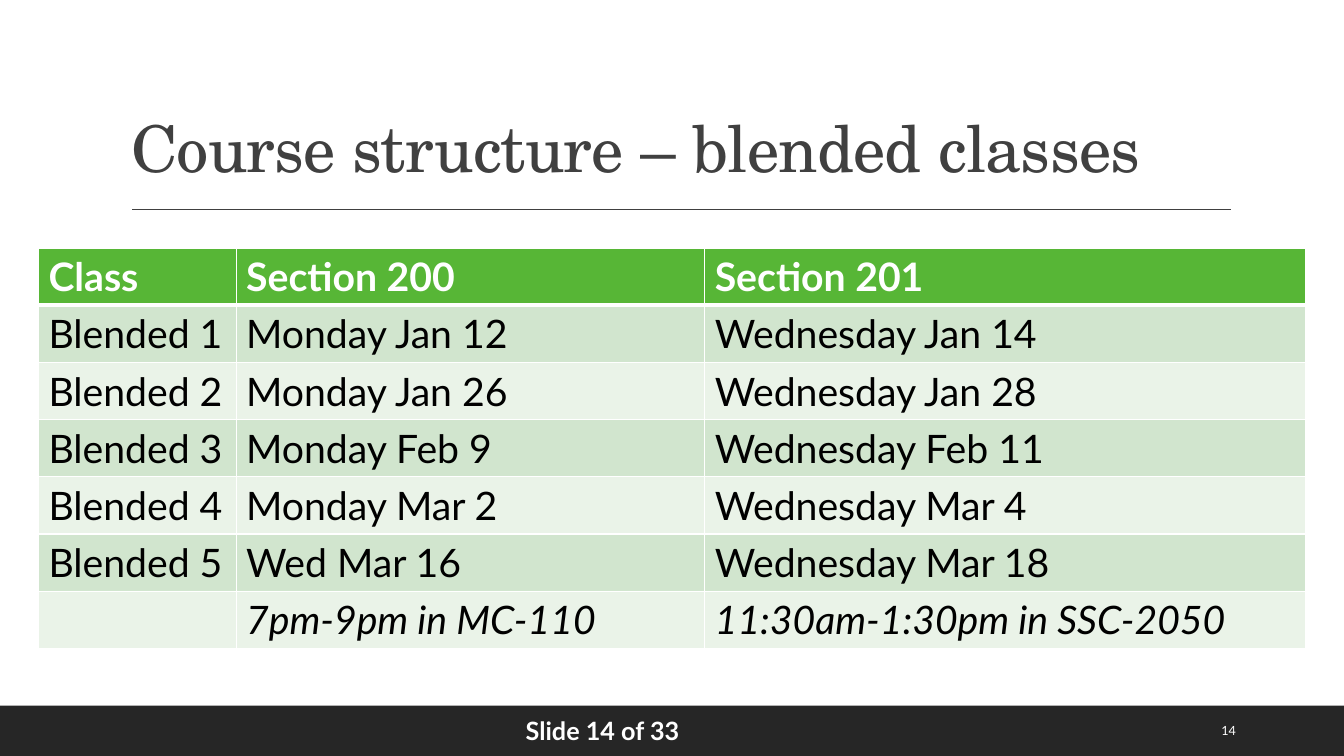
from dataclasses import dataclass

from lxml import etree
from pptx import Presentation
from pptx.dml.color import RGBColor
from pptx.enum.shapes import MSO_CONNECTOR, MSO_SHAPE
from pptx.enum.text import MSO_ANCHOR, MSO_AUTO_SIZE, PP_ALIGN
from pptx.oxml.ns import qn
from pptx.util import Cm, Pt

RECTANGLE = MSO_SHAPE.RECTANGLE
STRAIGHT = MSO_CONNECTOR.STRAIGHT
TOP, MIDDLE, BOTTOM = MSO_ANCHOR.TOP, MSO_ANCHOR.MIDDLE, MSO_ANCHOR.BOTTOM
LEFT = PP_ALIGN.LEFT
NO_FIT = MSO_AUTO_SIZE.NONE

COLOURS = {
    "bar": "262626",
    "title": "404040",
    "header": "57B636",
    "odd": "D1E5CE",
    "even": "EAF3E8",
    "white": "FFFFFF",
    "black": "000000",
}
BODY_FONT = "Lato"
TITLE_FONT = "TeX Gyre Schola"
TITLE_ONLY = 5
WIDTH, HEIGHT = 33.87, 19.05

COLUMN_WIDTHS = (4.98, 11.81, 15.14)
ROW_HEIGHT = 1.44
SCHEDULE = (
    ("Class", "Section 200", "Section 201"),
    ("Blended 1", "Monday Jan 12", "Wednesday Jan 14"),
    ("Blended 2", "Monday Jan 26", "Wednesday Jan 28"),
    ("Blended 3", "Monday Feb 9", "Wednesday Feb 11"),
    ("Blended 4", "Monday Mar 2", "Wednesday Mar 4"),
    ("Blended 5", "Wed Mar 16", "Wednesday Mar 18"),
    ("", "7pm-9pm in MC-110", "11:30am-1:30pm in SSC-2050"),
)


@dataclass(frozen=True)
class FooterLabel:
    text: str
    left: float
    width: float
    size: float
    bold: bool
    anchor: MSO_ANCHOR


FOOTER_LABELS = (
    FooterLabel("Slide 14 of 33", 13, 6.65, 18, True, TOP),
    FooterLabel("14", 30.53, 2.16, 9, False, MIDDLE),
)


def rgb(name: str) -> RGBColor:
    return RGBColor.from_string(COLOURS[name])


def write_text(frame, text: str, *, size: float, colour: str = "white",
               font: str = BODY_FONT, bold: bool = False, italic: bool = False,
               line_spacing: float = 1.0, tracking: int = 0) -> None:
    para = frame.paragraphs[0]
    para.alignment = LEFT
    para.line_spacing = line_spacing
    span = para.add_run()
    span.text = text
    span.font.name = font
    span.font.size = Pt(size)
    span.font.bold = bold
    span.font.italic = italic
    span.font.color.rgb = rgb(colour)
    if tracking:
        span._r.get_or_add_rPr().set("spc", str(tracking))


def add_title(page) -> None:
    title = page.shapes.title
    title.left, title.top = Cm(3.05), Cm(0.79)
    title.width, title.height = Cm(27.94), Cm(4.04)
    frame = title.text_frame
    frame.auto_size = NO_FIT
    frame.vertical_anchor = BOTTOM
    write_text(frame, "Course structure – blended classes", size=46,
               colour="title", font=TITLE_FONT, line_spacing=0.9, tracking=-50)


def add_bar(page) -> None:
    bar = page.shapes.add_shape(RECTANGLE, 0, Cm(17.78), Cm(WIDTH), Cm(1.27))
    bar.shadow.inherit = False
    bar.fill.solid()
    bar.fill.fore_color.rgb = rgb("bar")
    bar.line.fill.background()


def add_rule(page) -> None:
    rule = page.shapes.add_connector(STRAIGHT, Cm(3.33), Cm(5.28), Cm(31.01), Cm(5.28))
    rule.line.color.rgb = rgb("title")
    rule.line.width = Pt(1)
    etree.SubElement(rule._element.spPr, qn("a:effectLst"))


def add_footer_label(page, label: FooterLabel) -> None:
    box = page.shapes.add_textbox(Cm(label.left), Cm(17.91), Cm(label.width), Cm(1.02))
    frame = box.text_frame
    frame.word_wrap = True
    frame.vertical_anchor = label.anchor
    write_text(frame, label.text, size=label.size, bold=label.bold)


def set_borders(cell, row: int) -> None:
    widths = {"lnL": 1, "lnR": 1, "lnT": 3 if row == 1 else 1, "lnB": 3 if row == 0 else 1}
    properties = cell._tc.get_or_add_tcPr()
    for side, width in widths.items():
        border = etree.SubElement(properties, qn(f"a:{side}"), w=str(Pt(width)))
        fill = etree.SubElement(border, qn("a:solidFill"))
        etree.SubElement(fill, qn("a:srgbClr"), val=COLOURS["white"])


def fill_cell(cell, text: str, row: int) -> None:
    header = row == 0
    band = "header" if header else ("even", "odd")[row % 2]
    set_borders(cell, row)
    cell.fill.solid()
    cell.fill.fore_color.rgb = rgb(band)
    if text:
        write_text(cell.text_frame, text, size=28, bold=header,
                   colour="white" if header else "black",
                   italic=row == len(SCHEDULE) - 1)


def add_schedule(page) -> None:
    rows, columns = len(SCHEDULE), len(COLUMN_WIDTHS)
    table = page.shapes.add_table(rows, columns, Cm(0.97), Cm(6.25),
                                  Cm(sum(COLUMN_WIDTHS)), Cm(rows * ROW_HEIGHT)).table
    for column, width in zip(table.columns, COLUMN_WIDTHS):
        column.width = Cm(width)
    for row, texts in enumerate(SCHEDULE):
        table.rows[row].height = Cm(ROW_HEIGHT)
        for column, text in enumerate(texts):
            fill_cell(table.cell(row, column), text, row)


def main() -> None:
    deck = Presentation()
    deck.slide_width, deck.slide_height = Cm(WIDTH), Cm(HEIGHT)
    page = deck.slides.add_slide(deck.slide_layouts[TITLE_ONLY])
    add_bar(page)
    add_rule(page)
    add_title(page)
    add_schedule(page)
    for label in FOOTER_LABELS:
        add_footer_label(page, label)
    deck.save("out.pptx")


if __name__ == "__main__":
    main()
